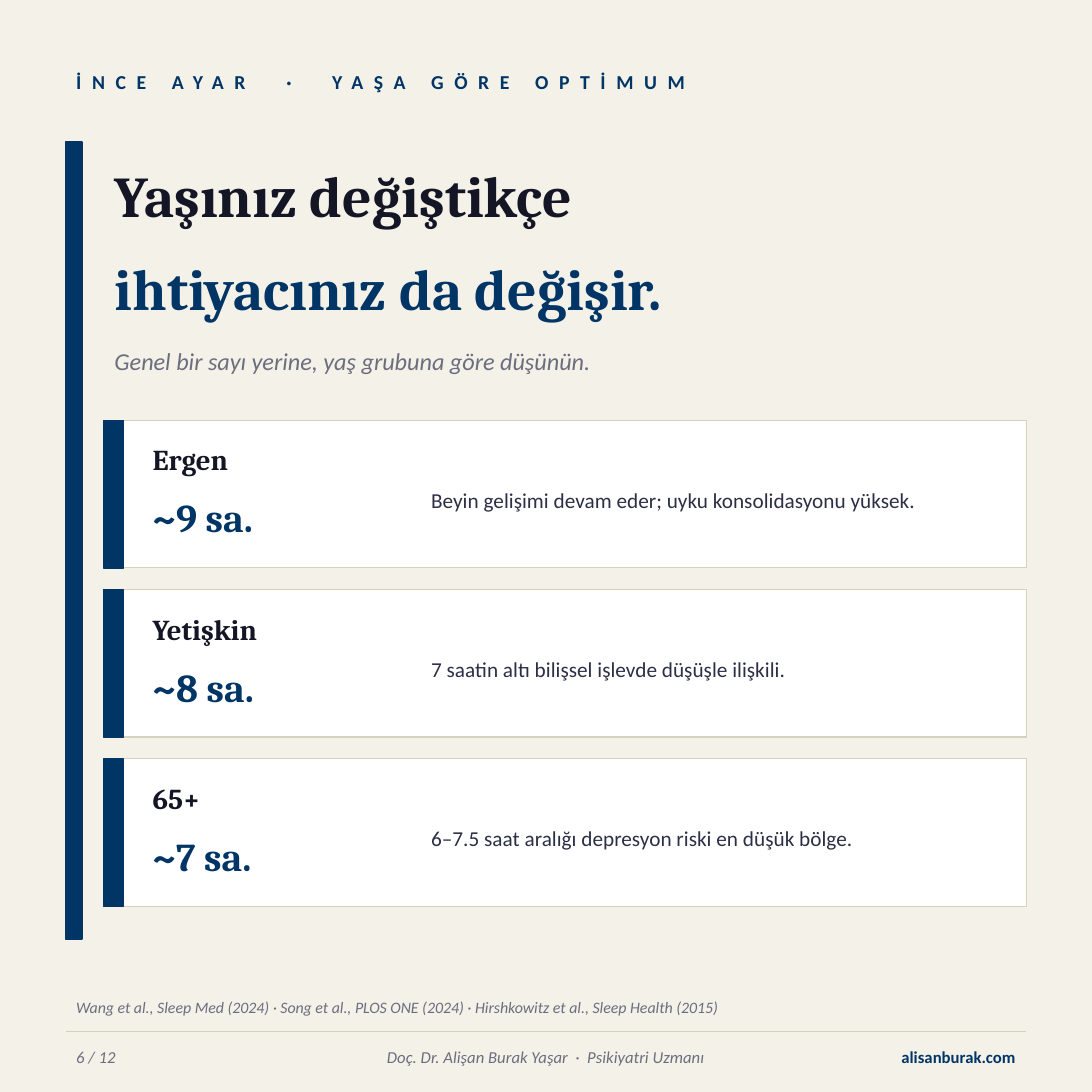
from lxml.etree import SubElement
from pptx import Presentation
from pptx.dml.color import RGBColor
from pptx.enum.shapes import MSO_CONNECTOR as Connector, MSO_SHAPE as Shape
from pptx.enum.text import MSO_ANCHOR as Anchor, MSO_AUTO_SIZE as AutoSize, PP_ALIGN as Align
from pptx.oxml.ns import qn
from pptx.util import Pt

COLORS = {
    "paper": "F4F1E8", "navy": "003566", "ink": "141626", "body": "2C2F45",
    "muted": "6B6E7D", "white": "FFFFFF", "border": "D6D0BF",
}
SERIF, SANS = "Cambria", "Calibri"
AGE_GROUPS = [
    ("Ergen", "~9 sa.", "Beyin gelişimi devam eder; uyku konsolidasyonu yüksek."),
    ("Yetişkin", "~8 sa.", "7 saatin altı bilişsel işlevde düşüşle ilişkili."),
    ("65+", "~7 sa.", "6–7.5 saat aralığı depresyon riski en düşük bölge."),
]
CARD_TOP, CARD_PITCH, CARD_HEIGHT = 277.2, 111.6, 97.2
LEFT, CARD_LEFT, RIGHT = 43.2, 68.4, 676.8


def rgb(name):
    """Return the named palette colour."""
    return RGBColor.from_string(COLORS[name])


class Page:
    """Holds the current slide and draws its elements, measured in points."""

    def __init__(self, deck):
        """Add a title-only slide with the paper background."""
        self.slide = deck.slides.add_slide(deck.slide_layouts[5])
        self.slide.background.fill.solid()
        self.slide.background.fill.fore_color.rgb = rgb("paper")

    def style(self, para, size, color, font=SANS, bold=False, italic=False, align=Align.LEFT):
        """Format a paragraph and its runs."""
        para.alignment = align
        for span in para.runs:
            span.font.name, span.font.size = font, Pt(size)
            span.font.bold, span.font.italic = bold, italic
            span.font.color.rgb = rgb(color)

    def title(self, left, top, width, height, lines, colors, size, spacing):
        """Fill the title placeholder with one coloured paragraph per line."""
        box = self.slide.shapes.title
        box.left, box.top, box.width, box.height = map(Pt, (left, top, width, height))
        frame = box.text_frame
        frame.auto_size, frame.vertical_anchor = AutoSize.NONE, Anchor.MIDDLE
        frame.text = "\n".join(lines)
        for para, color in zip(frame.paragraphs, colors):
            para.line_spacing = Pt(spacing)
            self.style(para, size, color, SERIF, bold=True)

    def text(self, left, top, width, height, words, size, color,
             anchor=Anchor.MIDDLE, tracking=0, **look):
        """Add a one-paragraph text box."""
        box = self.slide.shapes.add_textbox(*map(Pt, (left, top, width, height)))
        frame = box.text_frame
        frame.word_wrap, frame.vertical_anchor = True, anchor
        frame.text = words
        para = frame.paragraphs[0]
        self.style(para, size, color, **look)
        if tracking:
            para.runs[0].font._element.set("spc", str(tracking * 100))

    def rect(self, left, top, width, height, fill, line, weight):
        """Add a flat rectangle."""
        box = self.slide.shapes.add_shape(Shape.RECTANGLE, *map(Pt, (left, top, width, height)))
        box.shadow.inherit = False
        box.fill.solid()
        box.fill.fore_color.rgb = rgb(fill)
        box.line.color.rgb = rgb(line)
        box.line.width = Pt(weight)

    def rule(self, left, right, y):
        """Add a thin horizontal line."""
        line = self.slide.shapes.add_connector(Connector.STRAIGHT, Pt(left), Pt(y), Pt(right), Pt(y))
        line.line.color.rgb = rgb("border")
        line.line.width = Pt(0.75)
        SubElement(line._element.spPr, qn("a:effectLst"))

    def card(self, top, group, hours, note):
        """Add an age-group card with its accent bar and texts."""
        self.rect(CARD_LEFT, top, RIGHT - CARD_LEFT, CARD_HEIGHT, "white", "border", 0.75)
        self.rect(CARD_LEFT, top, 12.96, CARD_HEIGHT, "navy", "navy", 1)
        self.text(93.6, top + 10.8, 172.8, 36, group, 19, "ink", Anchor.TOP, font=SERIF, bold=True)
        self.text(93.6, top + 44.64, 172.8, 46.8, hours, 26, "navy", Anchor.TOP, font=SERIF, bold=True)
        self.text(277.2, top + 18, 388.8, 68.4, note, 14, "body")


def main():
    """Build and save the deck."""
    deck = Presentation()
    deck.slide_width = deck.slide_height = Pt(720)
    page = Page(deck)
    page.text(LEFT, 39.6, 633.6, 28.8, "İNCE AYAR  ·  YAŞA GÖRE OPTİMUM", 13, "navy",
              tracking=7, bold=True)
    page.rect(LEFT, 93.6, 10.8, 525.6, "navy", "navy", 1)
    page.title(CARD_LEFT, 88.2, 612, 126, ["Yaşınız değiştikçe", "ihtiyacınız da değişir."],
               ["ink", "navy"], 38, 61.2)
    page.text(CARD_LEFT, 223.2, 612, 28.8, "Genel bir sayı yerine, yaş grubuna göre düşünün.",
              16, "muted", italic=True)
    for index, age_group in enumerate(AGE_GROUPS):
        page.card(CARD_TOP + index * CARD_PITCH, *age_group)
    page.text(LEFT, 651.6, 633.6, 25.2,
              "Wang et al., Sleep Med (2024) · Song et al., PLOS ONE (2024) · "
              "Hirshkowitz et al., Sleep Health (2015)", 10.5, "muted", italic=True)
    page.rule(LEFT, RIGHT, 680.4)
    page.text(LEFT, 684, 108, 25.2, "6 / 12", 11, "muted", italic=True)
    page.text(158.4, 684, 403.2, 25.2, "Doç. Dr. Alişan Burak Yaşar  ·  Psikiyatri Uzmanı",
              11, "muted", italic=True, align=Align.CENTER)
    page.text(568.8, 684, 108, 25.2, "alisanburak.com", 11, "navy", bold=True, align=Align.RIGHT)
    deck.save("out.pptx")


if __name__ == "__main__":
    main()
